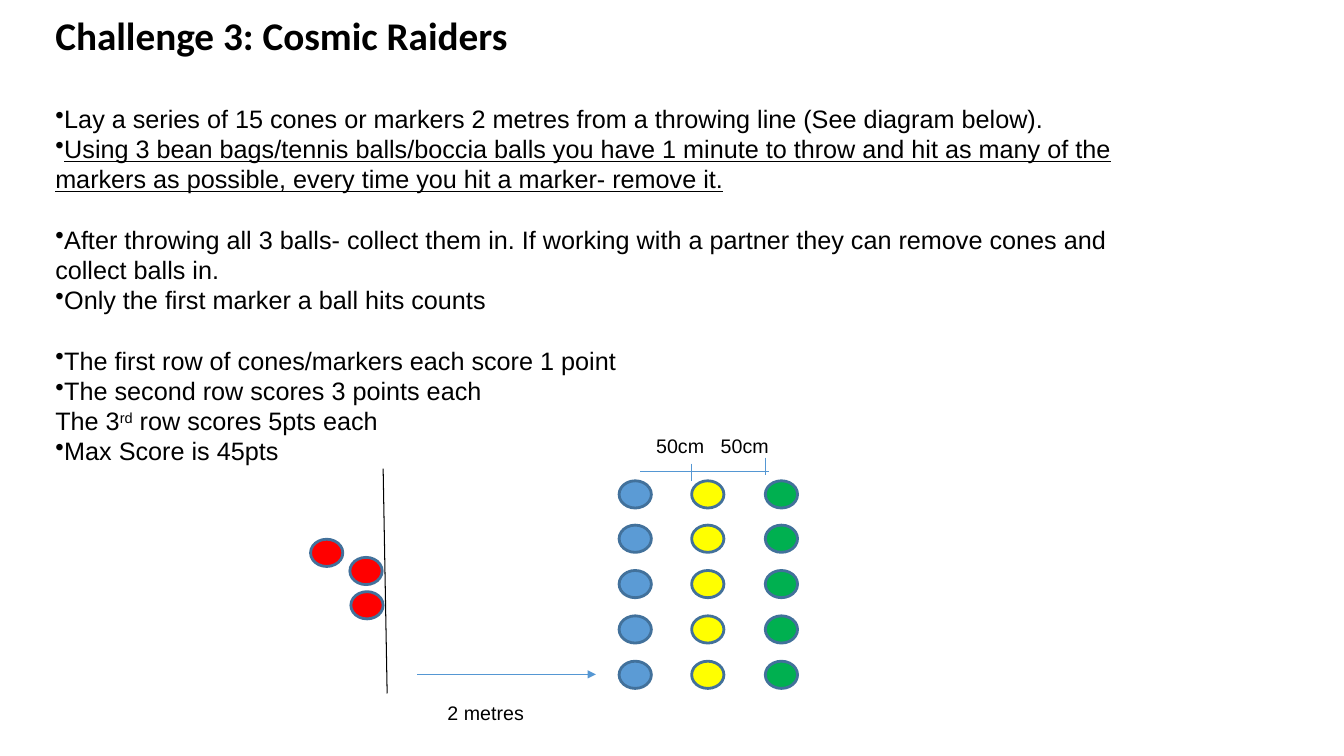
from pptx import Presentation
from pptx.dml.color import RGBColor
from pptx.enum.shapes import MSO_CONNECTOR as Connector, MSO_SHAPE as Shape
from pptx.enum.text import MSO_ANCHOR as Anchor
from pptx.oxml.ns import qn
from pptx.util import Emu, Pt
from lxml.etree import SubElement

PX = 9144  # 100 px to the inch
BLACK, BLUE, OUTLINE, DIMENSION = "000000", "5B9BD5", "42719B", "5597D3"
YELLOW, GREEN, RED = "FFFF00", "00B050", "FF0000"
LINE_HEIGHT = 21.6


def px(length):
    return Emu(length * PX)


def color(value):
    return RGBColor.from_string(value)


class SlideBuilder:
    """Holds the text style and the slide being built."""

    def __init__(self, slide, font="Arial"):
        self.slide = slide
        self.font = font

    def text_frame(self, left, top, width, height):
        box = self.slide.shapes.add_textbox(*map(px, (left, top, width, height)))
        box.text_frame.word_wrap = True
        return box.text_frame

    def style(self, paragraph, size, font=None, bold=False):
        paragraph.font.name = font or self.font
        paragraph.font.size = Pt(size)
        paragraph.font.bold = bold
        paragraph.font.color.rgb = color(BLACK)

    def bullet(self, paragraph):
        properties = paragraph._p.get_or_add_pPr()
        properties.set("marL", "0")
        properties.set("indent", str(-12 * PX))
        mark = properties.makeelement(qn("a:buChar"), {"char": "•"})
        properties.insert_element_before(mark, "a:tabLst", "a:defRPr", "a:extLst")

    def instructions(self, left, top, width, height, title, items):
        frame = self.text_frame(left, top, width, height)
        frame.vertical_anchor = Anchor.TOP
        frame.margin_top = px(8)
        heading = frame.paragraphs[0]
        heading.text = title
        self.style(heading, 28, "Calibri", bold=True)
        for parts, space, bulleted, underlined in items:
            paragraph = frame.add_paragraph()
            self.style(paragraph, 18)
            paragraph.line_spacing = Pt(LINE_HEIGHT)
            paragraph.space_before = Pt(space)
            paragraph.font.underline = underlined
            if bulleted:
                self.bullet(paragraph)
            # Every second part is a superscript
            for index, part in enumerate(parts):
                run = paragraph.add_run()
                run.text = part
                if index % 2:
                    run.font._element.set("baseline", "30000")

    def label(self, left, top, width, text):
        paragraph = self.text_frame(left, top, width, 34).paragraphs[0]
        paragraph.text = text
        self.style(paragraph, 14)

    def marker(self, left, top, fill):
        shape = self.slide.shapes.add_shape(
            Shape.OVAL, px(left), px(top), px(32), px(27))
        shape.shadow.inherit = False
        shape.fill.solid()
        shape.fill.fore_color.rgb = color(fill)
        shape.line.color.rgb = color(OUTLINE)
        shape.line.width = Pt(2)

    def line(self, start_x, start_y, end_x, end_y, stroke=DIMENSION, arrow=False):
        connector = self.slide.shapes.add_connector(
            Connector.STRAIGHT, *map(px, (start_x, start_y, end_x, end_y)))
        connector.line.color.rgb = color(stroke)
        connector.line.width = Pt(0.75)
        if arrow:
            SubElement(connector.line._get_or_add_ln(), qn("a:tailEnd"), type="triangle")
        SubElement(connector._element.spPr, qn("a:effectLst"))


# Instructions: text parts, space before, bulleted, underlined
ITEMS = [
    (["Lay a series of 15 cones or markers 2 metres from a throwing line "
      "(See diagram below)."], 32, True, False),
    (["Using 3 bean bags/tennis balls/boccia balls you have 1 minute to throw and hit "
      "as many of the markers as possible, every time you hit a marker- remove it."],
     0, True, True),
    (["After throwing all 3 balls- collect them in. If working with a partner they can "
      "remove cones and collect balls in."], LINE_HEIGHT, True, False),
    (["Only the first marker a ball hits counts"], 0, True, False),
    (["The first row of cones/markers each score 1 point"], LINE_HEIGHT, True, False),
    (["The second row scores 3 points each"], 0, True, False),
    (["The 3", "rd", " row scores 5pts each"], 0, False, False),
    (["Max Score is 45pts"], 0, True, False),
]


def main():
    presentation = Presentation()
    presentation.slide_width, presentation.slide_height = px(1333), px(750)
    slide = presentation.slides.add_slide(presentation.slide_layouts[6])
    builder = SlideBuilder(slide)

    builder.instructions(45, 3, 1099, 528, "Challenge 3: Cosmic Raiders", ITEMS)

    # Throwing line
    builder.line(380, 465, 384, 688, BLACK)

    # Three rows of five cones
    for left, fill in ((614, BLUE), (686, YELLOW), (759, GREEN)):
        for index in range(5):
            builder.marker(left, 477 + index * 179 // 4, fill)

    # Throwing distance
    builder.line(414, 669, 591, 669, arrow=True)
    builder.label(434, 690, 180, "2 metres")

    # Gaps between the rows
    for left in (641, 705):
        builder.label(left, 426, 80, "50cm")
    builder.line(635, 468, 763, 468)
    for x, top in ((686, 460), (759, 454)):
        builder.line(x, top, x, top + 17)

    # Balls
    for left, top in ((308, 535), (347, 553), (348, 587)):
        builder.marker(left, top, RED)

    presentation.save("out.pptx")


if __name__ == "__main__":
    main()
